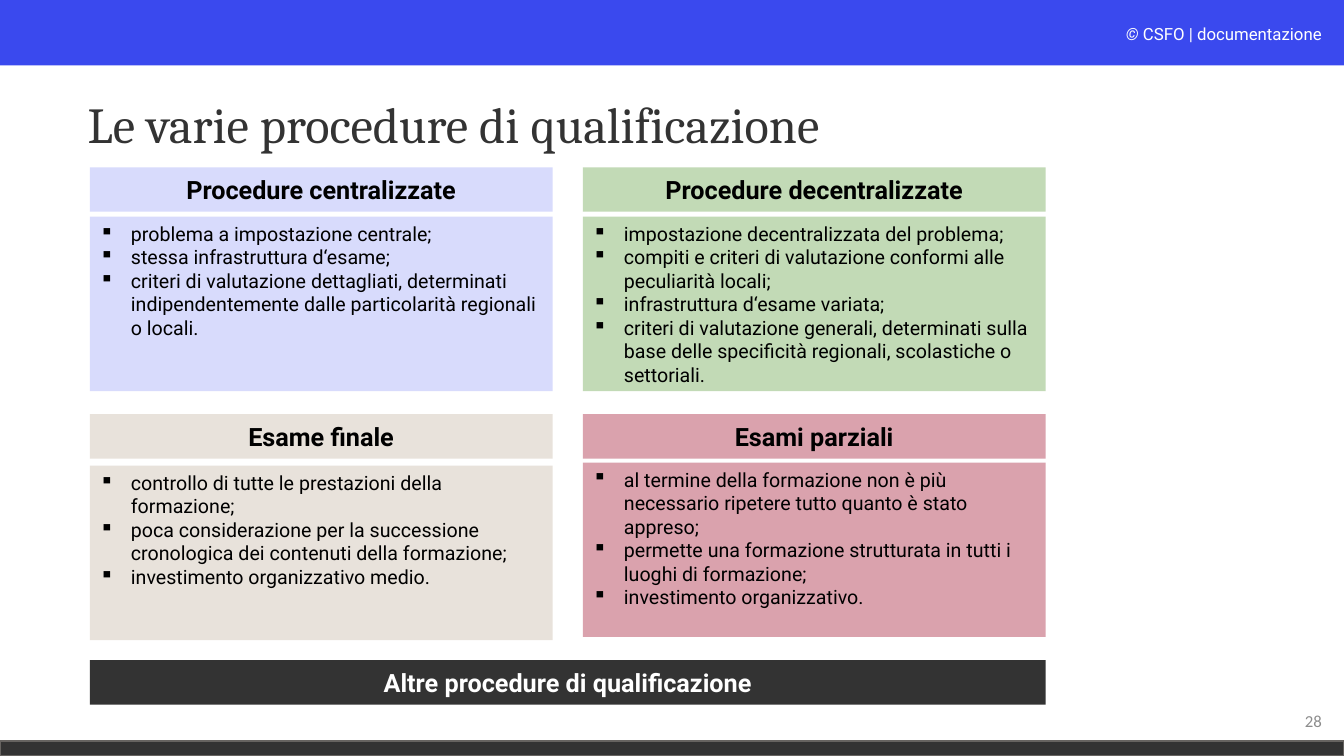
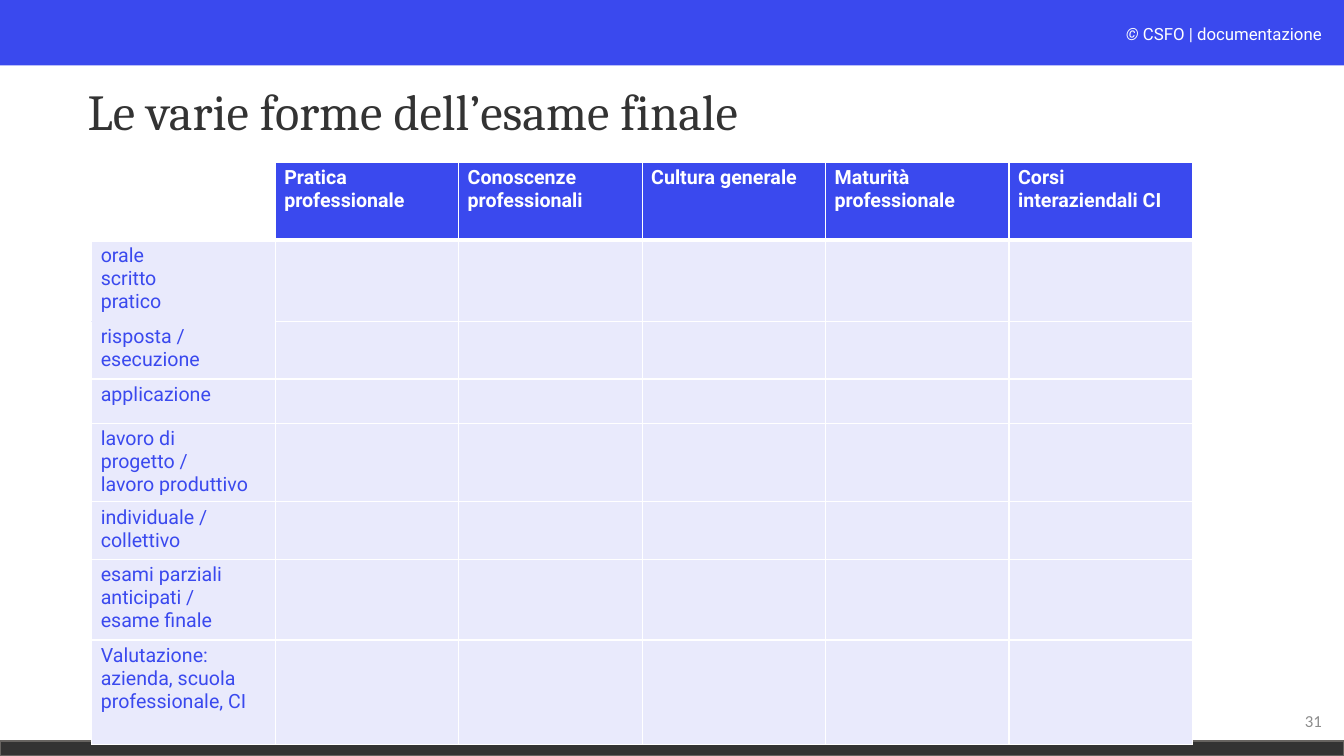
"""Build two slides on qualification procedures and save them as out.pptx."""
import lxml.etree
import pptx
import pptx.dml.color
import pptx.enum.shapes
import pptx.enum.text
import pptx.oxml.ns
import pptx.util

Inches = pptx.util.Inches
Pt = pptx.util.Pt
qn = pptx.oxml.ns.qn
ALIGN = pptx.enum.text.PP_ALIGN
ANCHOR = pptx.enum.text.MSO_ANCHOR

HUES = {
    "blue": "3A49EE", "dark": "333333", "edge": "666360", "grey": "8C8C8C",
    "white": "FFFFFF", "near": "FCFDFE", "black": "000000", "pale": "E9EAFC",
    "lilac": "D8DBFC", "green": "C2DAB6", "sand": "E8E2DB", "rose": "DAA2AD",
}

CARDS = [
    ("Procedure centralizzate", "lilac", 0, 1.66, 2.15, [
        "problema a impostazione centrale;",
        "stessa infrastruttura d‘esame;",
        "criteri di valutazione dettagliati, determinati indipendentemente "
        "dalle particolarità regionali o locali."]),
    ("Procedure decentralizzate", "green", 1, 1.66, 2.15, [
        "impostazione decentralizzata del problema;",
        "compiti e criteri di valutazione conformi alle peculiarità locali;",
        "infrastruttura d‘esame variata;",
        "criteri di valutazione generali, determinati sulla base delle "
        "specificità regionali, scolastiche o settoriali."]),
    ("Esame finale", "sand", 0, 4.11, 4.62, [
        "controllo di tutte le prestazioni della formazione;",
        "poca considerazione per la successione cronologica dei contenuti "
        "della formazione;",
        "investimento organizzativo medio."]),
    ("Esami parziali", "rose", 1, 4.11, 4.59, [
        "al termine della formazione non è più necessario ripetere tutto "
        "quanto è stato appreso;",
        "permette una formazione strutturata in tutti i luoghi di formazione;",
        "investimento organizzativo."]),
]
LAST = "Altre procedure di qualificazione"
LEFT, WIDE, STEP, HEAD, BODY = 0.89, 4.59, 4.89, 0.44, 1.73

HEADS = [
    ["Pratica professionale"], ["Conoscenze", "professionali"],
    ["Cultura generale"], ["Maturità", "professionale"],
    ["Corsi", "interaziendali CI"],
]
FORMS = [
    (0.81, ["orale", "scritto", "pratico"]),
    (0.57, ["risposta /", "esecuzione"]),
    (0.44, ["applicazione"]),
    (0.78, ["lavoro di progetto /", "lavoro produttivo"]),
    (0.57, ["individuale /", "collettivo"]),
    (0.8, ["esami parziali", "anticipati /", "esame finale"]),
    (1.04, ["Valutazione:", "azienda, scuola", "professionale, CI"]),
]
TOP_ROW, COLUMN = 0.77, 1.82


def tone(name):
    return pptx.dml.color.RGBColor.from_string(HUES[name])


def place(*spot):
    return [Inches(n) for n in spot]


def add_run(para, text, size, hue, face="Roboto", bold=False, slant=False):
    run = para.add_run()
    run.text = text
    font = run.font
    font.size, font.name, font.bold, font.italic = Pt(size), face, bold, slant
    font.color.rgb = tone(hue)


def write(frame, lines, size, hue, align=ALIGN.LEFT, mark=None, **style):
    frame.word_wrap = True
    for i, line in enumerate(lines):
        para = frame.paragraphs[0] if i == 0 else frame.add_paragraph()
        para.alignment = align
        if mark:
            props = para._p.get_or_add_pPr()
            props.set("marL", str(Inches(0.31)))
            props.set("indent", str(-Inches(0.31)))
            lxml.etree.SubElement(props, qn("a:buChar")).set("char", mark)
        add_run(para, line, size, hue, **style)


def add_box(slide, spot, fill, edge=None):
    kind = pptx.enum.shapes.MSO_SHAPE.RECTANGLE
    box = slide.shapes.add_shape(kind, *place(*spot))
    box.shadow.inherit = False
    box.fill.solid()
    box.fill.fore_color.rgb = tone(fill)
    if edge:
        box.line.color.rgb = tone(edge)
        box.line.width = Pt(1)
    else:
        box.line.fill.background()
    return box


def add_head(slide, spot, fill, text, hue):
    frame = add_box(slide, spot, fill).text_frame
    frame.vertical_anchor = ANCHOR.MIDDLE
    write(frame, [text], 18, hue, ALIGN.CENTER, bold=True)


def dress(layout, slide):
    """Draw the shared bands and credit, then move them to the layout."""
    parts = [add_box(slide, (0, 0, 13.33, 0.65), "blue"),
             add_box(slide, (0, 7.35, 13.33, 0.15), "dark", "edge")]
    note = slide.shapes.add_textbox(*place(8.62, 0.19, 4.59, 0.3))
    write(note.text_frame, ["© "], 12, "near", ALIGN.RIGHT, slant=True)
    add_run(note.text_frame.paragraphs[0], "CSFO | documentazione", 12, "white")
    for i, part in enumerate(parts + [note]):
        part.element.xpath(".//p:cNvPr")[0].set("id", str(50 + i))
        layout.shapes.element.insert(2 + i, part.element)


def label(slide, title, top, page):
    """Set the slide's title and number."""
    head = slide.shapes.title
    head.left, head.top, head.width, head.height = place(0.77, top, 11.5, 1.45)
    frame = head.text_frame
    frame.vertical_anchor = ANCHOR.MIDDLE
    write(frame, [title], 36, "dark", face="Cambria")
    frame.paragraphs[0].line_spacing = 0.9
    note = slide.shapes.add_textbox(*place(10.21, 6.95, 3, 0.4)).text_frame
    note.vertical_anchor = ANCHOR.MIDDLE
    write(note, [page], 12, "grey", ALIGN.RIGHT, face="Calibri")


def add_cards(slide):
    for name, hue, col, top, low, points in CARDS:
        left = LEFT + col * STEP
        add_head(slide, (left, top, WIDE, HEAD), hue, name, "black")
        frame = add_box(slide, (left, low, WIDE, BODY), hue).text_frame
        frame.vertical_anchor = ANCHOR.TOP
        write(frame, points, 14, "black", mark="▪")
    add_head(slide, (LEFT, 6.55, STEP + WIDE, HEAD), "dark", LAST, "white")


def rule(cell, side, hue="white", width=1):
    line = lxml.etree.SubElement(cell._tc.get_or_add_tcPr(), qn("a:ln" + side))
    line.set("w", str(Pt(width)))
    fill = lxml.etree.SubElement(line, qn("a:solidFill"))
    lxml.etree.SubElement(fill, qn("a:srgbClr")).set("val", HUES[hue])


def add_grid(slide):
    rows = [(TOP_ROW, [[]] + HEADS)]
    rows += [(high, [text] + [[]] * len(HEADS)) for high, text in FORMS]
    count = len(HEADS) + 1
    spot = place(0.91, 1.61, COLUMN * count, sum(row[0] for row in rows))
    grid = slide.shapes.add_table(len(rows), count, *spot).table
    grid.first_row = grid.horz_banding = False
    for col in grid.columns:
        col.width = Inches(COLUMN)
    for r, (high, texts) in enumerate(rows):
        grid.rows[r].height = Inches(high)
        for c, lines in enumerate(texts):
            cell = grid.cell(r, c)
            cell.margin_left = cell.margin_right = Inches(0.09)
            cell.margin_top = cell.margin_bottom = Inches(0.04)
            joint = {(1, 0): "B", (2, 0): "T"}.get((r, c))
            thick = {0: "B", 1: "T"}.get(r)
            for side in "LRTB":
                rule(cell, side, "pale" if side == joint else "white",
                     3 if side == thick else 1)
            if r == c == 0:
                cell.fill.background()
                continue
            cell.fill.solid()
            cell.fill.fore_color.rgb = tone("pale" if r else "blue")
            write(cell.text_frame, lines, 14, "blue" if r else "white",
                  bold=r == 0)


def main():
    deck = pptx.Presentation()
    deck.slide_width, deck.slide_height = place(13.33, 7.5)
    layout = deck.slide_layouts[5]
    slides = [deck.slides.add_slide(layout) for _ in range(2)]
    dress(layout, slides[0])
    label(slides[0], "Le varie procedure di qualificazione", 0.54, "28")
    add_cards(slides[0])
    label(slides[1], "Le varie forme dell’esame finale", 0.41, "31")
    add_grid(slides[1])
    deck.save("out.pptx")


if __name__ == "__main__":
    main()
